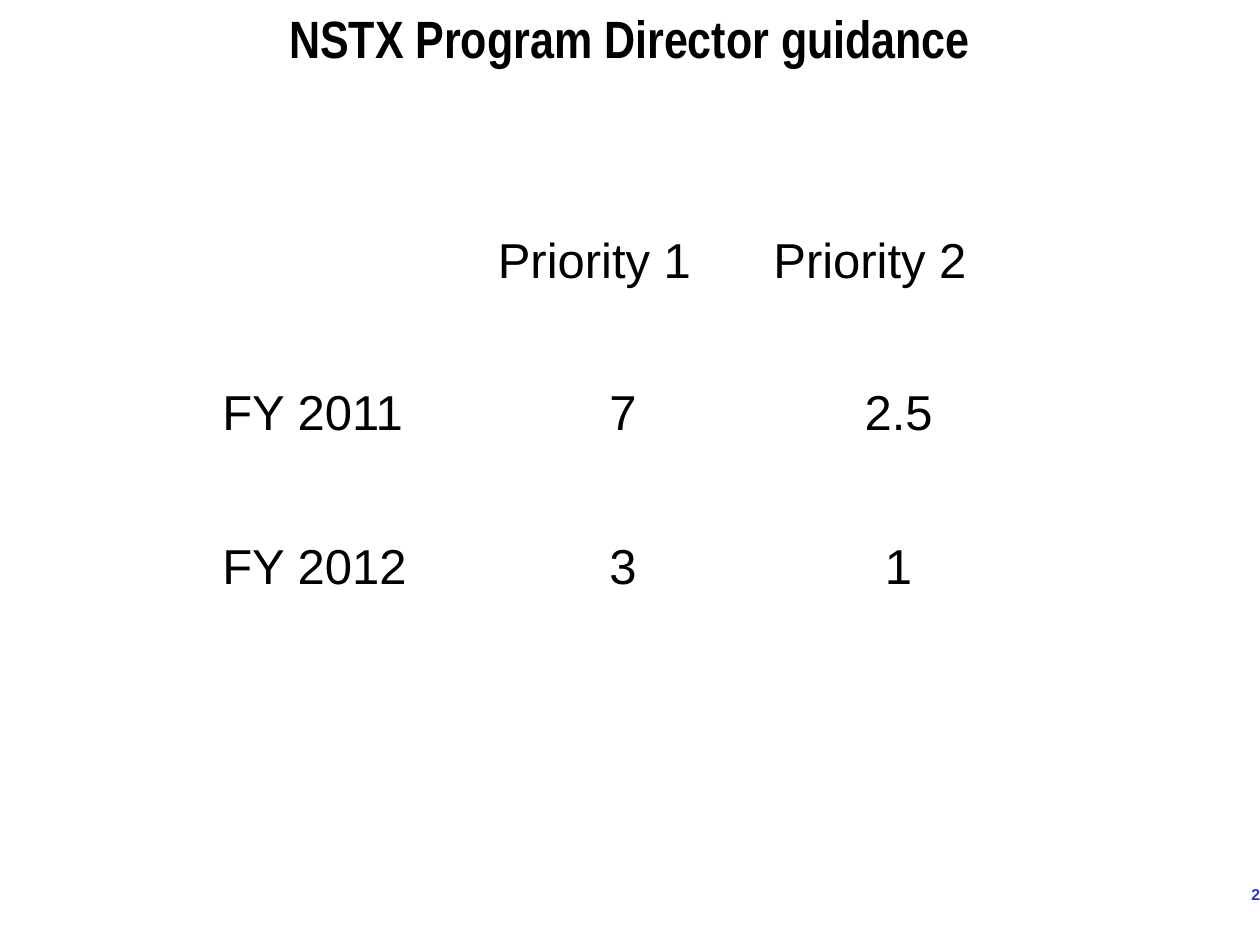
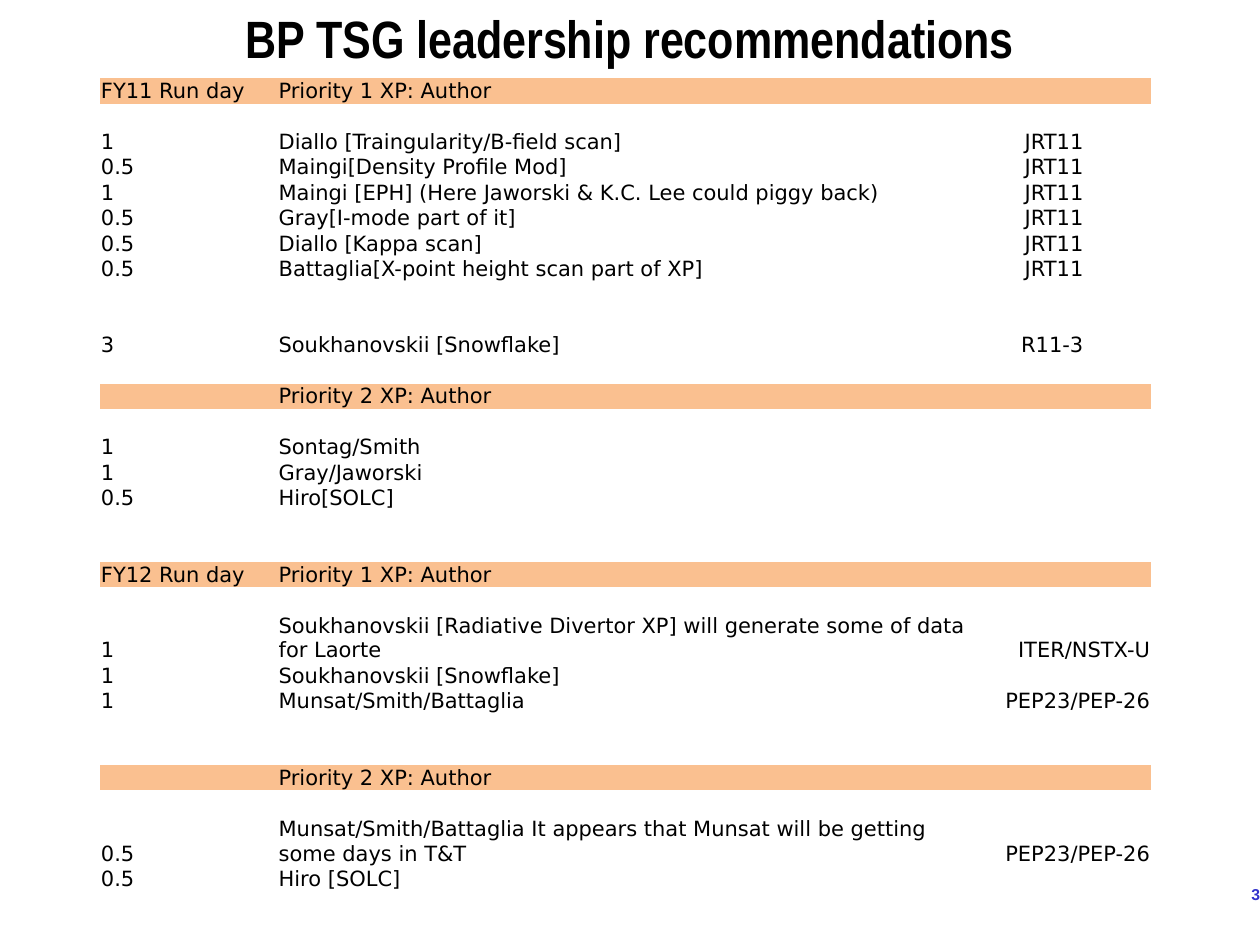
import dataclasses

import lxml.etree
import pptx
import pptx.dml.color
import pptx.enum.text
import pptx.oxml.ns
import pptx.util

# Lengths are counted in cells of a grid of 100 columns by 75 rows.
COLUMNS, ROWS = 100, 75
SLIDE_WIDTH, SLIDE_HEIGHT = pptx.util.Inches(10), pptx.util.Inches(7.5)
COLORS = {"text": "000000", "page number": "3333CC", "band": "FAC090"}
TITLE_ONLY_LAYOUT = 5
PLAIN_TABLE_STYLE = "{2D5ABB26-0587-4C30-8999-92F81FD0307C}"

ALIGN = pptx.enum.text.PP_ALIGN
ANCHOR = pptx.enum.text.MSO_ANCHOR


@dataclasses.dataclass(frozen=True)
class Area:
    left: float
    top: float
    width: float
    height: float

    def lengths(self) -> tuple:
        return across(self.left), down(self.top), across(self.width), down(self.height)


@dataclasses.dataclass(frozen=True)
class TextStyle:
    font: str
    size: int
    color: str = "text"
    bold: bool = False


@dataclasses.dataclass(frozen=True)
class RunRow:
    """One table line: run days, experiment proposal and its milestone."""
    days: str = ""
    proposal: str = ""
    milestone: str = ""
    band: bool = False
    wide: bool = False
    lines: int = 1


TITLE_AREA = Area(5, 0.4, 90, 5.1)
NUMBER_AREA = Area(98.6, 69.9, 2.4, 2.2)
TITLE_STYLE = TextStyle("Arial Narrow", 30, bold=True)
NUMBER_STYLE = TextStyle("Arial", 9, "page number", True)
GUIDANCE_STYLE = TextStyle("Arial", 28)
PLAN_STYLE = TextStyle("DejaVu Sans", 12)

GUIDANCE_LEFT, GUIDANCE_TOP = 16.65, 18.1
GUIDANCE_WIDTHS = [21.87] * 3
GUIDANCE_HEIGHTS = [12.05, 12.22, 12.22]
GUIDANCE = [
    ("", "Priority 1", "Priority 2"),
    ("FY 2011", "7", "2.5"),
    ("FY 2012", "3", "1"),
]

PLAN_LEFT, PLAN_TOP = 7.95, 6.2
PLAN_WIDTHS = [14.1, 56, 8, 5.3]
PLAN_ROW, PLAN_EXTRA_LINE = 2.02, 1.95
GAP = RunRow()
PLAN = [
    RunRow("FY11 Run day", "Priority 1 XP: Author", band=True),
    GAP,
    RunRow("1", "Diallo [Traingularity/B-field scan]", "JRT11"),
    RunRow("0.5", "Maingi[Density Profile Mod]", "JRT11"),
    RunRow("1", "Maingi [EPH] (Here Jaworski & K.C. Lee could piggy back)", "JRT11"),
    RunRow("0.5", "Gray[I-mode part of it]", "JRT11"),
    RunRow("0.5", "Diallo [Kappa scan]", "JRT11"),
    RunRow("0.5", "Battaglia[X-point height scan part of XP]", "JRT11"),
    GAP,
    GAP,
    RunRow("3", "Soukhanovskii [Snowflake]", "R11-3"),
    GAP,
    RunRow("", "Priority 2 XP: Author", band=True),
    GAP,
    RunRow("1", "Sontag/Smith"),
    RunRow("1", "Gray/Jaworski"),
    RunRow("0.5", "Hiro[SOLC]"),
    GAP,
    GAP,
    RunRow("FY12 Run day", "Priority 1 XP: Author", band=True),
    GAP,
    RunRow("1", "Soukhanovskii [Radiative Divertor XP] will generate some of data for Laorte",
           "ITER/NSTX-U", wide=True, lines=2),
    RunRow("1", "Soukhanovskii [Snowflake]"),
    RunRow("1", "Munsat/Smith/Battaglia", "PEP23/PEP-26", wide=True),
    GAP,
    GAP,
    RunRow("", "Priority 2 XP: Author", band=True),
    GAP,
    RunRow("0.5", "Munsat/Smith/Battaglia It appears that Munsat will be getting some days in T&T",
           "PEP23/PEP-26", wide=True, lines=2),
    RunRow("0.5", "Hiro [SOLC]"),
]


def across(columns: float) -> int:
    return round(SLIDE_WIDTH * columns / COLUMNS)


def down(rows: float) -> int:
    return round(SLIDE_HEIGHT * rows / ROWS)


def rgb(name: str) -> pptx.dml.color.RGBColor:
    return pptx.dml.color.RGBColor.from_string(COLORS[name])


def write(frame, text: str, style: TextStyle, align=ALIGN.LEFT) -> None:
    frame.text = text
    paragraph = frame.paragraphs[0]
    paragraph.alignment = align
    font = paragraph.font
    font.name, font.size, font.bold = style.font, pptx.util.Pt(style.size), style.bold
    font.color.rgb = rgb(style.color)
    if not text:
        # An empty cell takes its line height from the end mark.
        lxml.etree.SubElement(paragraph._p, pptx.oxml.ns.qn("a:endParaRPr"),
                              sz=str(style.size * 100))


def place(box, area: Area) -> None:
    box.left, box.top, box.width, box.height = area.lengths()


def add_page(deck, title: str, number: int):
    page = deck.slides.add_slide(deck.slide_layouts[TITLE_ONLY_LAYOUT])
    place(page.shapes.title, TITLE_AREA)
    frame = page.shapes.title.text_frame
    frame.auto_size = pptx.enum.text.MSO_AUTO_SIZE.NONE
    frame.vertical_anchor = ANCHOR.MIDDLE
    write(frame, title, TITLE_STYLE, ALIGN.CENTER)

    frame = page.shapes.add_textbox(*NUMBER_AREA.lengths()).text_frame
    frame.word_wrap = False
    frame.margin_left = 0
    frame.vertical_anchor = ANCHOR.MIDDLE
    write(frame, str(number), NUMBER_STYLE, ALIGN.RIGHT)
    return page


def add_plain_table(page, left: float, top: float, widths: list, heights: list):
    """Add a table without borders, bands or fills."""
    area = Area(left, top, sum(widths), sum(heights))
    frame = page.shapes.add_table(len(heights), len(widths), *area.lengths())
    table = frame.table
    table.first_row = table.horz_banding = False
    table._tbl.tblPr.find(pptx.oxml.ns.qn("a:tableStyleId")).text = PLAIN_TABLE_STYLE
    for column, width in zip(table.columns, widths):
        column.width = across(width)
    for row, height in zip(table.rows, heights):
        row.height = down(height)
    for cell in table.iter_cells():
        cell.fill.background()
    return table


def add_guidance_table(page) -> None:
    table = add_plain_table(page, GUIDANCE_LEFT, GUIDANCE_TOP, GUIDANCE_WIDTHS, GUIDANCE_HEIGHTS)
    for row, texts in enumerate(GUIDANCE):
        for column, text in enumerate(texts):
            align = ALIGN.CENTER if row and column else ALIGN.LEFT
            write(table.cell(row, column).text_frame, text, GUIDANCE_STYLE, align)


def add_plan_table(page) -> None:
    heights = [PLAN_ROW + PLAN_EXTRA_LINE * (entry.lines - 1) for entry in PLAN]
    table = add_plain_table(page, PLAN_LEFT, PLAN_TOP, PLAN_WIDTHS, heights)
    margin = pptx.util.Pt(0.5)
    for row, entry in enumerate(PLAN):
        texts = (entry.days, entry.proposal, entry.milestone, "")
        for column, text in enumerate(texts):
            cell = table.cell(row, column)
            cell.margin_left = cell.margin_right = margin
            cell.margin_top = cell.margin_bottom = 0
            cell.vertical_anchor = ANCHOR.BOTTOM
            write(cell.text_frame, text, PLAN_STYLE, ALIGN.RIGHT if column == 2 else ALIGN.LEFT)
            if entry.band:
                cell.fill.solid()
                cell.fill.fore_color.rgb = rgb("band")
        if entry.wide:
            table.cell(row, 2).merge(table.cell(row, 3))


def main() -> None:
    deck = pptx.Presentation()
    deck.slide_width, deck.slide_height = SLIDE_WIDTH, SLIDE_HEIGHT
    add_guidance_table(add_page(deck, "NSTX Program Director guidance", 2))
    add_plan_table(add_page(deck, "BP TSG leadership recommendations", 3))
    deck.save("out.pptx")


if __name__ == "__main__":
    main()
